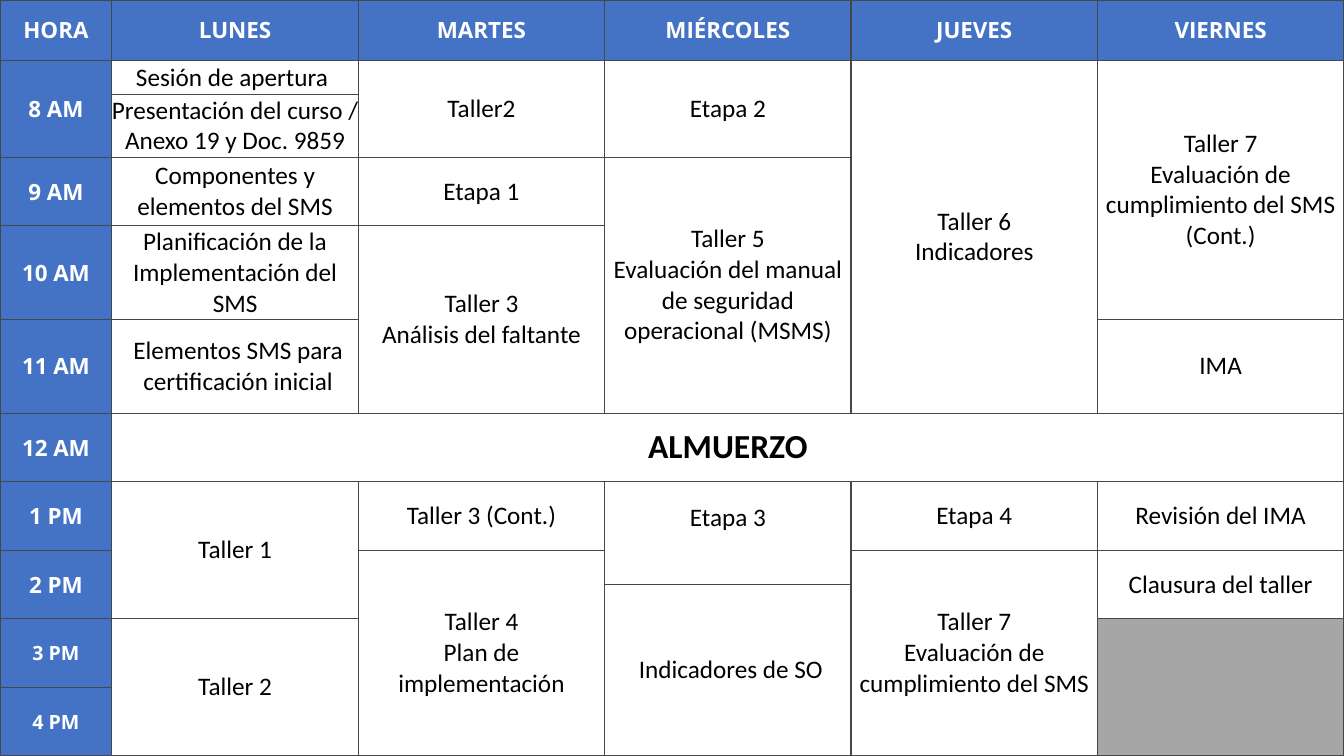
from lxml.etree import SubElement
from pptx import Presentation
from pptx.dml.color import RGBColor
from pptx.enum.text import MSO_ANCHOR as Anchor, PP_ALIGN as Align
from pptx.oxml.ns import qn
from pptx.util import Inches, Pt

SLIDE_WIDTH, SLIDE_HEIGHT = 13.33, 7.5
HOUR_WIDTH = 1.11
BLUE, GREY, WHITE, BLACK, BORDER = "4472C4", "A6A6A6", "FFFFFF", "000000", "474747"
ROW_HEIGHTS = [0.6, 0.34, 0.62, 0.68, 0.93, 0.93, 0.68, 0.68, 0.34, 0.34, 0.68, 0.68]
HEADINGS = ["HORA", "LUNES", "MARTES", "MIÉRCOLES", "JUEVES", "VIERNES"]

HOURS = [
    (1, 2, "8 AM", 16),
    (3, 1, "9 AM", 16),
    (4, 1, "10 AM", 16),
    (5, 1, "11 AM", 16),
    (6, 1, "12 AM", 16),
    (7, 1, "1 PM", 16),
    (8, 2, "2 PM", 16),
    (10, 1, "3 PM", 14),
    (11, 1, "4 PM", 14),
]

SESSIONS = {
    "LUNES": [
        (1, 1, "Sesión de apertura"),
        (2, 1, "Presentación del curso / Anexo 19 y Doc. 9859"),
        (3, 1, "Componentes y elementos del SMS"),
        (4, 1, "Planificación de la Implementación del SMS"),
        (5, 1, "Elementos SMS para certificación inicial"),
        (7, 3, "Taller 1"),
        (10, 2, "Taller 2"),
    ],
    "MARTES": [
        (1, 2, "Taller2"),
        (3, 1, "Etapa 1"),
        (4, 2, "Taller 3\nAnálisis del faltante"),
        (7, 1, "Taller 3 (Cont.)"),
        (8, 4, "Taller 4\nPlan de implementación"),
    ],
    "MIÉRCOLES": [
        (1, 2, "Etapa 2"),
        (3, 3, "Taller 5\nEvaluación del manual de seguridad operacional (MSMS)"),
        (7, 2, "Etapa 3"),
        (9, 3, "Indicadores de SO"),
    ],
    "JUEVES": [
        (1, 5, "Taller 6\nIndicadores"),
        (7, 1, "Etapa 4"),
        (8, 4, "Taller 7\nEvaluación de cumplimiento del SMS"),
    ],
    "VIERNES": [
        (1, 4, "Taller 7\nEvaluación de cumplimiento del SMS\n(Cont.)"),
        (5, 1, "IMA"),
        (7, 1, "Revisión del IMA"),
        (8, 2, "Clausura del taller"),
    ],
}


def rgb(color):
    return RGBColor.from_string(color)


def write(cell, text, size=18, font="Calibri", color=BLACK, bold=False):
    cell.text_frame.text = text
    for paragraph in cell.text_frame.paragraphs:
        paragraph.alignment = Align.CENTER
        paragraph.font.size = Pt(size)
        paragraph.font.name = font
        paragraph.font.bold = bold
        paragraph.font.color.rgb = rgb(color)


def paint(cell, color):
    cell.fill.solid()
    cell.fill.fore_color.rgb = rgb(color)


def add_borders(cell):
    properties = cell._tc.get_or_add_tcPr()
    for side in ("a:lnL", "a:lnR", "a:lnT", "a:lnB"):
        line = SubElement(properties, qn(side), w=str(Pt(1)))
        fill = SubElement(line, qn("a:solidFill"))
        SubElement(fill, qn("a:srgbClr"), val=BORDER)


def prepare(cell):
    cell.margin_left = cell.margin_right = cell.margin_top = cell.margin_bottom = 0
    cell.vertical_anchor = Anchor.MIDDLE
    add_borders(cell)
    cell.fill.background()


def span(schedule, row, column, rows=1, columns=1):
    cell = schedule.cell(row, column)
    if rows > 1 or columns > 1:
        cell.merge(schedule.cell(row + rows - 1, column + columns - 1))
    return cell


def add_label(cell, text, size=16):
    paint(cell, BLUE)
    write(cell, text, size=size, font="Open Sans", color=WHITE, bold=True)


def add_schedule(slide):
    schedule = slide.shapes.add_table(
        len(ROW_HEIGHTS), len(HEADINGS), 0, 0, Inches(SLIDE_WIDTH), Inches(SLIDE_HEIGHT)
    ).table
    schedule.first_row = schedule.horz_banding = False
    day_width = (SLIDE_WIDTH - HOUR_WIDTH) / len(SESSIONS)
    for index, column in enumerate(schedule.columns):
        column.width = Inches(day_width if index else HOUR_WIDTH)
    for row, height in zip(schedule.rows, ROW_HEIGHTS):
        row.height = Inches(height)
    for cell in schedule.iter_cells():
        prepare(cell)
    return schedule


def main():
    prs = Presentation()
    prs.slide_width, prs.slide_height = Inches(SLIDE_WIDTH), Inches(SLIDE_HEIGHT)
    slide = prs.slides.add_slide(prs.slide_layouts[6])
    schedule = add_schedule(slide)

    for column, heading in enumerate(HEADINGS):
        add_label(schedule.cell(0, column), heading)
    for row, rows, hour, size in HOURS:
        add_label(span(schedule, row, 0, rows), hour, size)
    for column, day in enumerate(HEADINGS[1:], start=1):
        for row, rows, session in SESSIONS[day]:
            write(span(schedule, row, column, rows), session)

    schedule.cell(1, 1).margin_right = Inches(0.06)
    schedule.cell(5, 1).margin_left = Inches(0.06)
    schedule.cell(9, 3).margin_left = Inches(0.06)
    schedule.cell(7, 3).margin_bottom = Inches(0.3)

    write(span(schedule, 6, 1, columns=5), "ALMUERZO", size=24, bold=True)
    paint(span(schedule, 10, 5, rows=2), GREY)
    prs.save("out.pptx")


if __name__ == "__main__":
    main()
